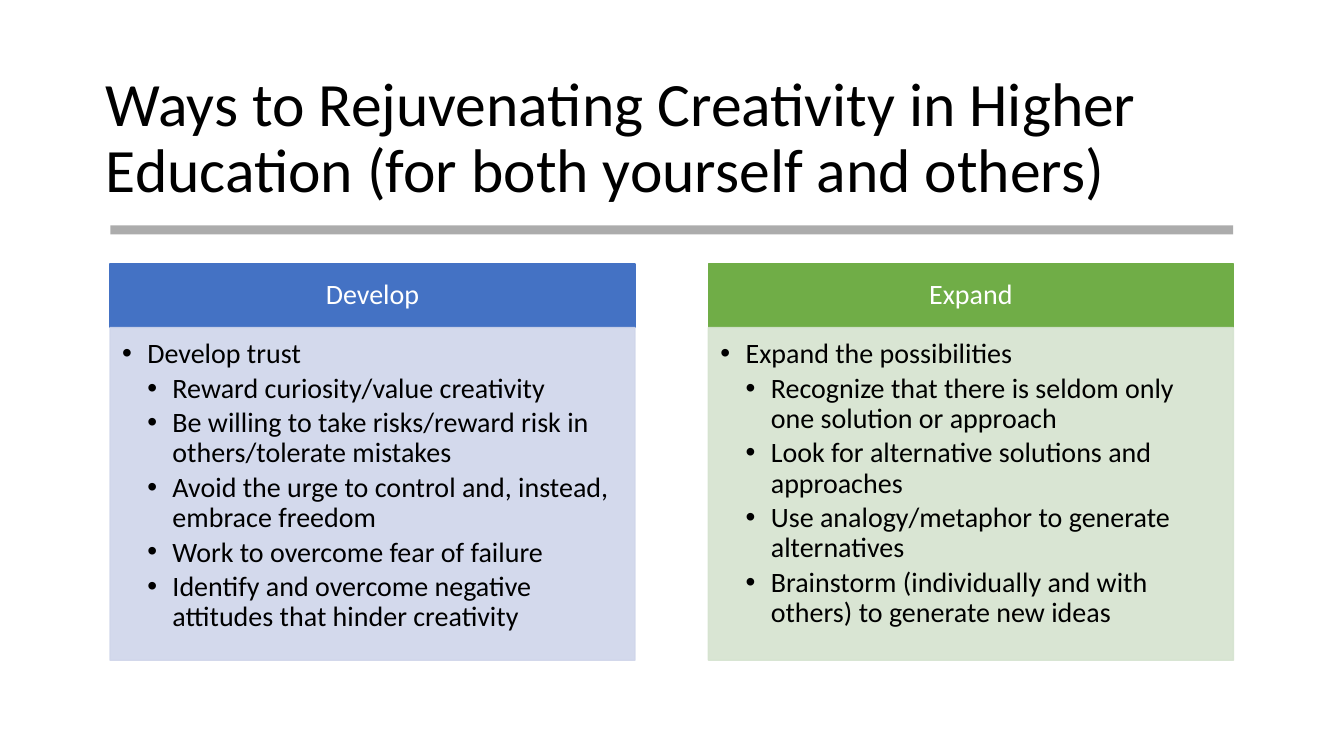
"""Builds a slide that compares two ways of rejuvenating creativity."""
from dataclasses import dataclass

from lxml import etree
from pptx import Presentation
from pptx.dml.color import RGBColor
from pptx.enum.shapes import MSO_SHAPE
from pptx.enum.text import MSO_ANCHOR, MSO_AUTO_SIZE, PP_ALIGN
from pptx.oxml.ns import qn
from pptx.util import Pt

RECTANGLE = MSO_SHAPE.RECTANGLE
MIDDLE, TOP = MSO_ANCHOR.MIDDLE, MSO_ANCHOR.TOP
LEFT, CENTER = PP_ALIGN.LEFT, PP_ALIGN.CENTER
NO_AUTOFIT = MSO_AUTO_SIZE.NONE
COMPARISON_LAYOUT = 4


@dataclass(frozen=True)
class Theme:
    """Holds the font, type sizes and colours of the slide."""
    font: str = "Calibri"
    title_size: int = 44
    text_size: int = 20
    text: str = "000000"
    heading_text: str = "FFFFFF"
    rule: str = "808080"
    heading_fills: tuple = ("4472C4", "70AD47")
    list_fills: tuple = ("CFD5EA", "D5E3CF")


THEME = Theme()
COLUMN_LEFT, COLUMN_WIDTH, COLUMN_STEP = 78.6, 375, 427.4
HEADING_TOP, HEADING_HEIGHT, LIST_HEIGHT = 188.6, 45.4, 237.6
INDENT = 18

TITLE = "Ways to Rejuvenating Creativity in Higher Education (for both yourself and others)"
COLUMNS = (
    ("Develop", "Develop trust", (
        "Reward curiosity/value creativity",
        "Be willing to take risks/reward risk in others/tolerate mistakes",
        "Avoid the urge to control and, instead, embrace freedom",
        "Work to overcome fear of failure",
        "Identify and overcome negative attitudes that hinder creativity",
    )),
    ("Expand", "Expand the possibilities", (
        "Recognize that there is seldom only one solution or approach",
        "Look for alternative solutions and approaches",
        "Use analogy/metaphor to generate alternatives",
        "Brainstorm (individually and with others) to generate new ideas",
    )),
)


def place(shape, left, top, width, height):
    """Moves and sizes a shape, in points."""
    shape.left, shape.top = Pt(left), Pt(top)
    shape.width, shape.height = Pt(width), Pt(height)


def set_frame(shape, anchor, margins):
    """Sets the anchor and the left, top, right and bottom insets of a text frame."""
    frame = shape.text_frame
    frame.word_wrap = True
    frame.auto_size = NO_AUTOFIT
    frame.vertical_anchor = anchor
    frame.margin_left, frame.margin_top, frame.margin_right, frame.margin_bottom = map(Pt, margins)
    return frame


def paint(fill, color, opacity=100):
    """Gives a fill a solid colour and an opacity in percent."""
    fill.solid()
    fill.fore_color.rgb = RGBColor.from_string(color)
    if opacity < 100:
        for color_element in fill._xPr.iter(qn("a:srgbClr")):
            if color_element.getparent().getparent() is fill._xPr:
                etree.SubElement(color_element, qn("a:alpha"), val=str(opacity * 1000))


def paint_panel(panel, color, opacity=100):
    """Fills and outlines a panel in one colour."""
    paint(panel.fill, color, opacity)
    panel.line.width = Pt(1)
    paint(panel.line.fill, color, opacity)


def style_paragraph(paragraph, size, color, align=LEFT, space_after=0):
    """Sets the spacing, alignment and font of a paragraph."""
    paragraph.alignment = align
    paragraph.line_spacing = 0.9
    paragraph.space_before = Pt(0)
    paragraph.space_after = Pt(space_after)
    font = paragraph.font
    font.name, font.size, font.bold = THEME.font, Pt(size), False
    font.color.rgb = RGBColor.from_string(color)


def add_bullet(paragraph, level):
    """Gives a paragraph a hanging bullet at a list level."""
    paragraph.level = level
    properties = paragraph._p.get_or_add_pPr()
    properties.set("marL", str(Pt(INDENT * (level + 1))))
    properties.set("indent", str(Pt(-INDENT)))
    etree.SubElement(properties, qn("a:buFont"), typeface="Arial")
    etree.SubElement(properties, qn("a:buChar"), char="•")


def fill_title(title):
    """Writes the slide title."""
    place(title, 68.4, 47.5, 823, 104.4)
    frame = set_frame(title, MIDDLE, (7.2, 3.6, 7.2, 3.6))
    frame.text = TITLE
    style_paragraph(frame.paragraphs[0], THEME.title_size, THEME.text)


def add_rule(slide):
    """Draws the grey bar under the title."""
    rule = slide.shapes.add_shape(RECTANGLE, Pt(78.8), Pt(161), Pt(802), Pt(6.5))
    rule.shadow.inherit = False
    paint(rule.fill, THEME.rule, 65)
    rule.line.fill.background()


def fill_heading(panel, heading, left, color):
    """Writes the coloured heading of a column."""
    place(panel, left, HEADING_TOP, COLUMN_WIDTH, HEADING_HEIGHT)
    paint_panel(panel, color)
    frame = set_frame(panel, MIDDLE, (11.5, 6.5, 11.5, 6.5))
    frame.text = heading
    style_paragraph(frame.paragraphs[0], THEME.text_size, THEME.heading_text, CENTER)


def fill_list(panel, lead, points, left, color):
    """Writes the two-level list of a column."""
    place(panel, left, HEADING_TOP + HEADING_HEIGHT, COLUMN_WIDTH, LIST_HEIGHT)
    paint_panel(panel, color, 90)
    frame = set_frame(panel, TOP, (8.6, 8.6, 11.5, 12.2))
    frame.text = "\n".join((lead, *points))
    for position, paragraph in enumerate(frame.paragraphs):
        add_bullet(paragraph, min(position, 1))
        style_paragraph(paragraph, THEME.text_size, THEME.text, space_after=3)


def main():
    """Builds and saves the slide."""
    presentation = Presentation()
    presentation.slide_width, presentation.slide_height = Pt(960), Pt(540)
    slide = presentation.slides.add_slide(presentation.slide_layouts[COMPARISON_LAYOUT])
    fill_title(slide.shapes.title)
    add_rule(slide)
    panels = {panel.placeholder_format.idx: panel for panel in slide.placeholders}
    for column, (heading, lead, points) in enumerate(COLUMNS):
        left = COLUMN_LEFT + column * COLUMN_STEP
        fill_heading(panels[1 + 2 * column], heading, left, THEME.heading_fills[column])
        fill_list(panels[2 + 2 * column], lead, points, left, THEME.list_fills[column])
    presentation.save("out.pptx")


if __name__ == "__main__":
    main()
